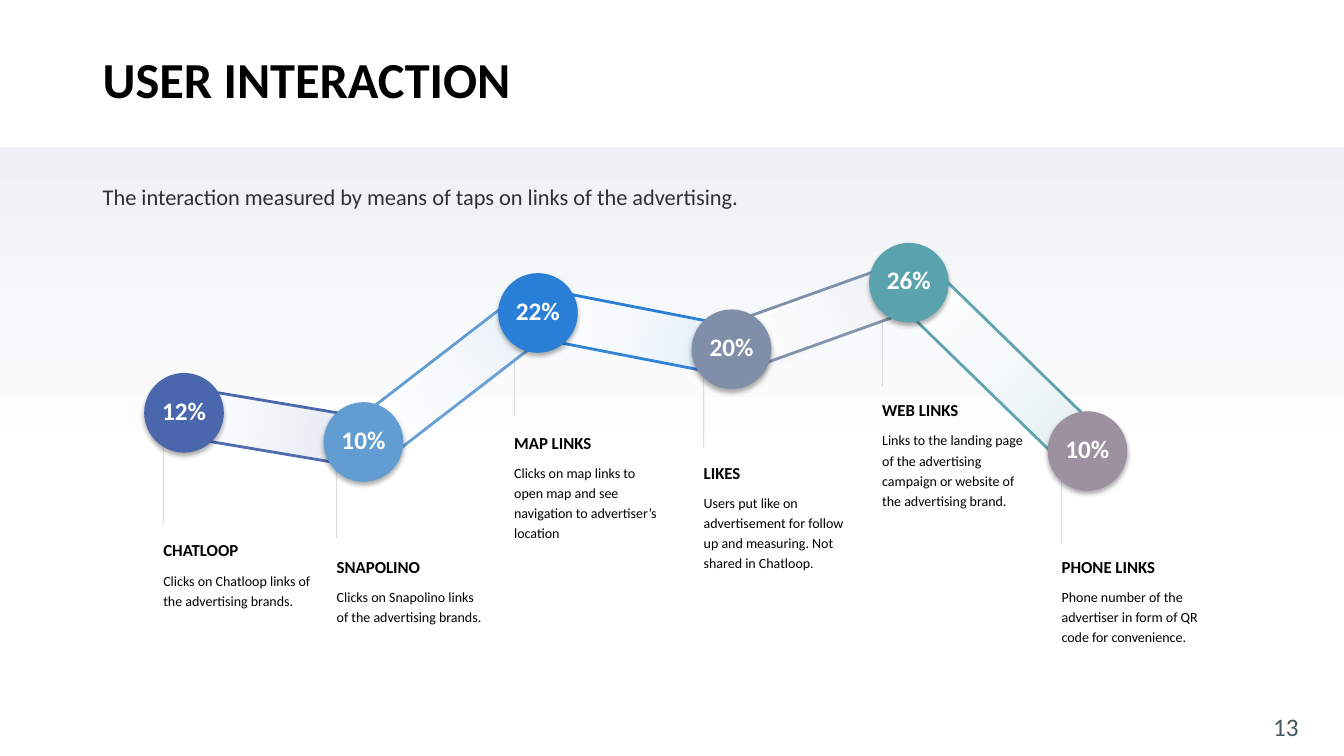
from dataclasses import dataclass
from math import atan2, degrees, hypot

from lxml.etree import SubElement
from pptx import Presentation
from pptx.dml.color import RGBColor
from pptx.enum.shapes import MSO_CONNECTOR as Connector, MSO_SHAPE as Preset
from pptx.enum.text import MSO_ANCHOR as Anchor, PP_ALIGN as Align
from pptx.oxml.ns import qn
from pptx.slide import Slide
from pptx.text.text import TextFrame
from pptx.util import Inches, Pt

Point = tuple[float, float]


@dataclass(frozen=True)
class Theme:
    font: str = "Calibri"
    black: str = "000000"
    white: str = "FFFFFF"
    haze: str = "E5E9EE"
    slate: str = "44575D"
    title: int = 36
    percent: int = 18
    number: int = 18
    intro: int = 16
    heading: int = 12
    detail: int = 10


@dataclass(frozen=True)
class Metric:
    percent: str
    heading: str
    detail: str
    color: str
    disc: Point
    stem: tuple[float, float]
    label: Point
    width: float = 1.47
    height: float = 1.01


@dataclass(frozen=True)
class Ribbon:
    color: str
    outline: tuple[Point, Point]
    tint: tuple[Point, Point]


THEME = Theme()
DISC = 0.79
BAND = 0.49

METRICS = [
    Metric("12%", "CHATLOOP", "Clicks on Chatloop links of the advertising brands.",
           "4A66AC", (1.43, 3.7), (3.87, 5.2), (1.62, 5.27)),
    Metric("10%", "SNAPOLINO", "Clicks on Snapolino links of the advertising brands.",
           "629DD1", (3.21, 3.99), (4.39, 5.34), (3.34, 5.43)),
    Metric("22%", "MAP LINKS",
           "Clicks on map links to open map and see navigation to advertiser’s location",
           "297FD5", (4.94, 2.71), (3.17, 4.13), (5.1, 4.2), height=1.22),
    Metric("20%", "LIKES",
           "Users put like on advertisement for follow up and measuring. "
           "Not shared in Chatloop.",
           "7F8FA9", (6.86, 3.07), (3.48, 4.44), (6.98, 4.5), 1.53, 1.42),
    Metric("26%", "WEB LINKS",
           "Links to the landing page of the advertising campaign or website "
           "of the advertising brand.",
           "5AA2AE", (8.62, 2.41), (2.88, 3.83), (8.75, 3.88), height=1.22),
    Metric("10%", "PHONE LINKS",
           "Phone number of the advertiser in form of QR code for convenience.",
           "9D90A0", (10.39, 4.08), (4.43, 5.39), (10.53, 5.43), 1.56),
]

RIBBONS = [
    Ribbon("4A66AC", ((1.72, 4.07), (3.68, 4.4)), ((1.48, 4.04), (3.44, 4.36))),
    Ribbon("629DD1", ((3.62, 4.41), (5.2, 3.19)), ((3.63, 4.45), (5.19, 3.21))),
    Ribbon("297FD5", ((5.35, 3.11), (7.3, 3.49)), ((5.26, 3.13), (7.21, 3.47))),
    Ribbon("7F8FA9", ((7.23, 3.47), (9.1, 2.8)), ((7.11, 3.61), (8.94, 2.83))),
    Ribbon("5AA2AE", ((9.16, 2.91), (10.68, 4.39)), ((9.03, 2.76), (10.53, 4.26))),
]


def rgb(color: str) -> RGBColor:
    return RGBColor.from_string(color)


def set_alpha(color_element, percent: int) -> None:
    SubElement(color_element, qn("a:alpha"), val=str(percent * 1000))


def write(frame: TextFrame, text: str, *, size: int, color: str = THEME.black,
          bold: bool = False, align: Align = Align.LEFT, spacing: float = 1.0,
          before: float = 0, alpha: int = 100) -> None:
    para = frame.paragraphs[0]
    if para.runs:
        para = frame.add_paragraph()
    para.alignment = align
    para.line_spacing = spacing
    if before:
        para.space_before = Pt(before)
    span = para.add_run()
    span.text = text
    span.font.name = THEME.font
    span.font.size = Pt(size)
    span.font.bold = bold
    span.font.color.rgb = rgb(color)
    if alpha < 100:
        set_alpha(next(para._p.iter(qn("a:srgbClr"))), alpha)


def add_box(page: Slide, left: float, top: float, width: float, height: float,
            side: float = 0.1, anchor: Anchor = Anchor.TOP) -> TextFrame:
    box = page.shapes.add_textbox(*map(Inches, (left, top, width, height)))
    frame = box.text_frame
    frame.word_wrap = True
    frame.vertical_anchor = anchor
    frame.margin_left = frame.margin_right = Inches(side)
    return frame


def add_solid(page: Slide, preset: Preset, left: float, top: float,
              width: float, height: float, color: str):
    shape = page.shapes.add_shape(preset, *map(Inches, (left, top, width, height)))
    shape.shadow.inherit = False
    shape.fill.solid()
    shape.fill.fore_color.rgb = rgb(color)
    shape.line.fill.background()
    return shape


def add_band(page: Slide, ends: tuple[Point, Point]):
    (x1, y1), (x2, y2) = ends
    length = hypot(x2 - x1, y2 - y1) + BAND
    band = add_solid(page, Preset.ROUNDED_RECTANGLE, (x1 + x2 - length) / 2,
                     (y1 + y2 - BAND) / 2, length, BAND, THEME.white)
    band.adjustments[0] = 0.5
    band.rotation = degrees(atan2(y2 - y1, x2 - x1))
    return band


def add_ribbon(page: Slide, ribbon: Ribbon) -> None:
    outline = add_band(page, ribbon.outline)
    outline.line.color.rgb = rgb(ribbon.color)
    outline.line.width = Pt(2)
    tint = add_band(page, ribbon.tint)
    tint.fill.gradient()
    tint.fill.gradient_angle = 0
    for stop, color in zip(tint.fill.gradient_stops, (THEME.white, ribbon.color)):
        stop.color.rgb = rgb(color)
    for color_element, alpha in zip(tint.element.iter(qn("a:srgbClr")), (0, 20)):
        set_alpha(color_element, alpha)


def add_stem(page: Slide, metric: Metric) -> None:
    x = Inches(metric.label[0])
    top, bottom = map(Inches, metric.stem)
    stem = page.shapes.add_connector(Connector.STRAIGHT, x, top, x, bottom)
    stem.line.color.rgb = rgb(THEME.black)
    stem.line.width = Pt(0.5)
    set_alpha(next(stem.element.iter(qn("a:srgbClr"))), 20)
    SubElement(stem.element.spPr, qn("a:effectLst"))


def add_disc(page: Slide, metric: Metric) -> None:
    disc = add_solid(page, Preset.OVAL, *metric.disc, DISC, DISC, metric.color)
    effects = disc.element.spPr.find(qn("a:effectLst"))
    shadow = SubElement(effects, qn("a:outerShdw"), blurRad=str(Pt(3.5)),
                        dist=str(Pt(2.2)), dir="5400000", rotWithShape="0")
    set_alpha(SubElement(shadow, qn("a:srgbClr"), val=THEME.black), 32)
    frame = disc.text_frame
    frame.margin_left = frame.margin_right = 0
    frame.margin_top = frame.margin_bottom = 0
    frame.vertical_anchor = Anchor.MIDDLE
    write(frame, metric.percent, size=THEME.percent, color=THEME.white, bold=True,
          align=Align.CENTER, spacing=0.8)


def add_label(page: Slide, metric: Metric) -> None:
    frame = add_box(page, *metric.label, metric.width, metric.height, side=0)
    write(frame, metric.heading, size=THEME.heading, bold=True, spacing=1.2)
    write(frame, metric.detail, size=THEME.detail, spacing=1.2, before=6)


def add_backdrop(page: Slide) -> None:
    fill = page.background.fill
    fill.gradient()
    fill.gradient_angle = 270
    stops = zip(fill.gradient_stops, (THEME.haze, THEME.white), (0, 0.62))
    for stop, color, position in stops:
        stop.color.rgb = rgb(color)
        stop.position = position
    add_solid(page, Preset.RECTANGLE, 0, 0, 13.33, 1.46, THEME.white)


def main() -> None:
    deck = Presentation()
    deck.slide_width, deck.slide_height = Inches(13.33), Inches(7.5)
    page = deck.slides.add_slide(deck.slide_layouts[6])
    add_backdrop(page)
    write(add_box(page, 0.92, 0.47, 11.5, 0.7, anchor=Anchor.MIDDLE),
          "USER INTERACTION", size=THEME.title, bold=True, spacing=0.9)
    write(add_box(page, 0.92, 1.71, 7.98, 1.2),
          "The interaction measured by means of taps on links of the advertising.",
          size=THEME.intro, spacing=1.2, alpha=80)
    write(add_box(page, 12.42, 7.01, 0.56, 0.4), "13", size=THEME.number,
          color=THEME.slate, align=Align.RIGHT)
    for metric in METRICS:
        add_stem(page, metric)
    for ribbon in RIBBONS:
        add_ribbon(page, ribbon)
    for metric in METRICS:
        add_disc(page, metric)
        add_label(page, metric)
    deck.save("out.pptx")


if __name__ == "__main__":
    main()
